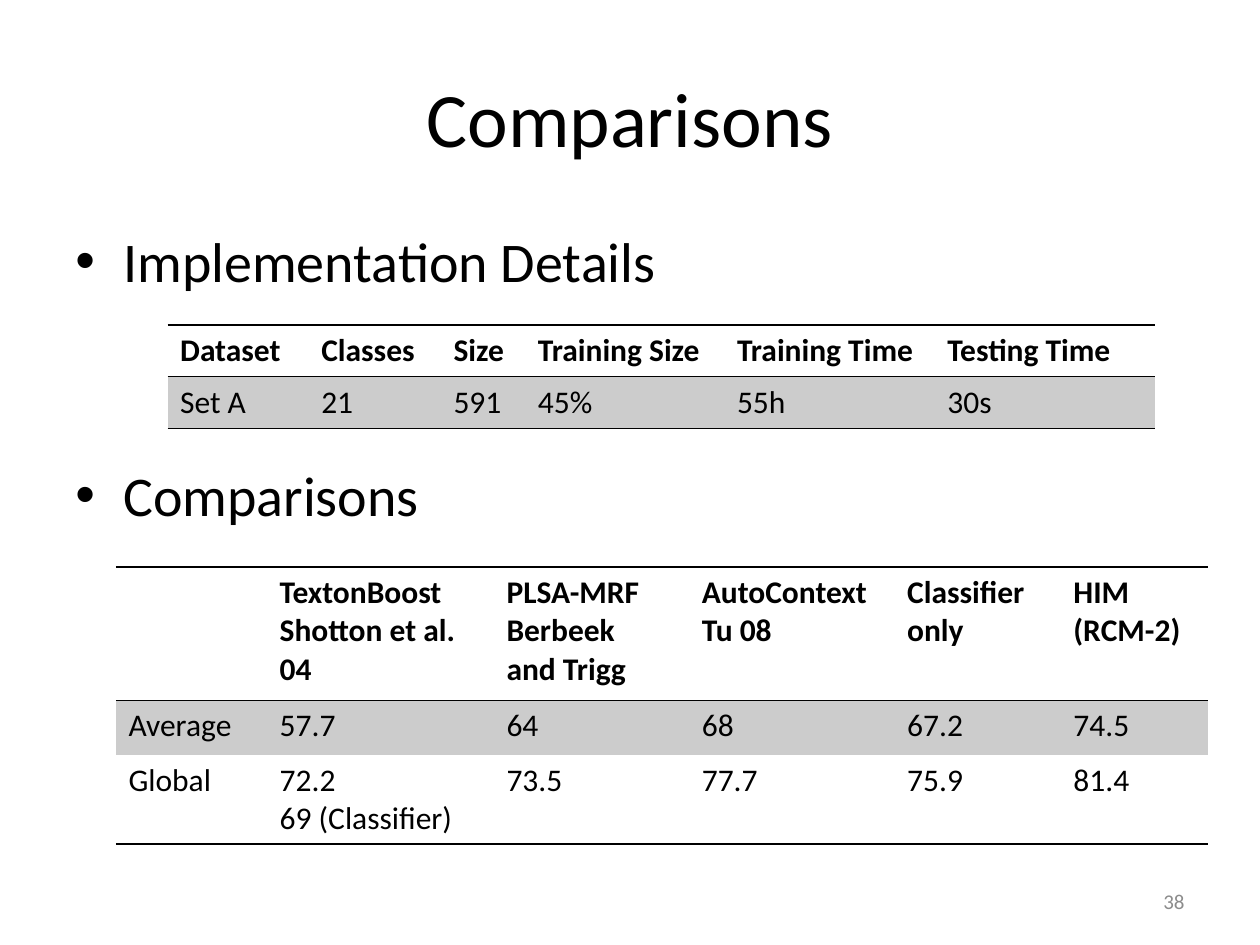
from lxml import etree
from pptx import Presentation
from pptx.dml.color import RGBColor
from pptx.enum import text as t
from pptx.oxml.ns import qn
from pptx.util import Inches, Pt

FONT = "Calibri"
BLACK, GREY, BAND = "000000", "8C8C8C", "CCCCCC"
PLAIN = "{2D5ABB26-0587-4C30-8999-92F81FD0307C}"  # no style, no grid

TITLE = "Comparisons"
POINTS = ["Implementation Details", "Comparisons"]
NUMBER = "38"

TABLES = [
    dict(
        left=0.92, top=4.5,
        cols=[1.2, 1.8, 1.55, 1.63, 1.32, 1.17],
        heights=[1.06, 0.43, 0.71],
        rows=[
            ["", "TextonBoost\nShotton et al.\n04", "PLSA-MRF\nBerbeek\nand Trigg",
             "AutoContext\nTu 08", "Classifier\nonly", "HIM\n(RCM-2)"],
            ["Average", "57.7", "64", "68", "67.2", "74.5"],
            ["Global", "72.2\n69 (Classifier)", "73.5", "77.7", "75.9", "81.4"],
        ],
    ),
    dict(
        left=1.33, top=2.58,
        cols=[1.12, 1.05, 0.67, 1.58, 1.67, 1.75],
        heights=[0.41, 0.41],
        rows=[
            ["Dataset", "Classes", "Size", "Training Size", "Training Time", "Testing Time"],
            ["Set A", "21", "591", "45%", "55h", "30s"],
        ],
    ),
]


def color(code):
    return RGBColor.from_string(code)


def style(frame, size, code=BLACK, bold=False):
    for para in frame.paragraphs:
        for run in para.runs:
            font = run.font
            font.name, font.size, font.bold = FONT, Pt(size), bold
            font.color.rgb = color(code)


def add_text(slide, box, words, size, code=BLACK,
             align=t.PP_ALIGN.LEFT, anchor=t.MSO_ANCHOR.MIDDLE):
    frame = slide.shapes.add_textbox(*map(Inches, box)).text_frame
    frame.word_wrap = True
    frame.vertical_anchor = anchor
    frame.text = words
    for para in frame.paragraphs:
        para.alignment = align
    style(frame, size, code)
    return frame


def add_bullet(para):
    props = para._p.get_or_add_pPr()
    props.set("marL", str(Inches(0.38)))
    props.set("indent", str(-Inches(0.38)))
    etree.SubElement(props, qn("a:buFont"), typeface="Arial")
    etree.SubElement(props, qn("a:buChar"), char="•")


def add_rule(cell, side):
    """Draw a thin black border on one side: T or B."""
    line = etree.SubElement(cell._tc.get_or_add_tcPr(), qn("a:ln" + side), w=str(Pt(1)))
    fill = etree.SubElement(line, qn("a:solidFill"))
    etree.SubElement(fill, qn("a:srgbClr"), val=BLACK)


def add_grid(slide, left, top, cols, heights, rows):
    box = map(Inches, (left, top, sum(cols), sum(heights)))
    table = slide.shapes.add_table(len(rows), len(cols), *box).table
    table.first_row = table.horz_banding = False
    table._tbl.tblPr.find(qn("a:tableStyleId")).text = PLAIN
    for col, width in zip(table.columns, cols):
        col.width = Inches(width)
    for i, (row, height) in enumerate(zip(rows, heights)):
        table.rows[i].height = Inches(height)
        for j, words in enumerate(row):
            cell = table.cell(i, j)
            cell.text = words
            style(cell.text_frame, 18, bold=i == 0)
            if i == 0:
                add_rule(cell, "T")
            if i in (0, len(rows) - 1):
                add_rule(cell, "B")
            if i % 2:
                cell.fill.solid()
                cell.fill.fore_color.rgb = color(BAND)
            else:
                cell.fill.background()


def main():
    deck = Presentation()
    deck.slide_width, deck.slide_height = Inches(10), Inches(7.5)
    slide = deck.slides.add_slide(deck.slide_layouts[6])

    add_text(slide, (0.5, 0.3, 9, 1.25), TITLE, 44, align=t.PP_ALIGN.CENTER)
    body = add_text(slide, (0.5, 1.75, 9, 4.95), "\n".join(POINTS), 32,
                    anchor=t.MSO_ANCHOR.TOP)
    body.paragraphs[1].space_before = Pt(95)  # room for the upper table
    for para in body.paragraphs:
        add_bullet(para)
    add_text(slide, (7.17, 6.95, 2.33, 0.4), NUMBER, 12, GREY, t.PP_ALIGN.RIGHT)

    for grid in TABLES:
        add_grid(slide, **grid)
    deck.save("out.pptx")


if __name__ == "__main__":
    main()
